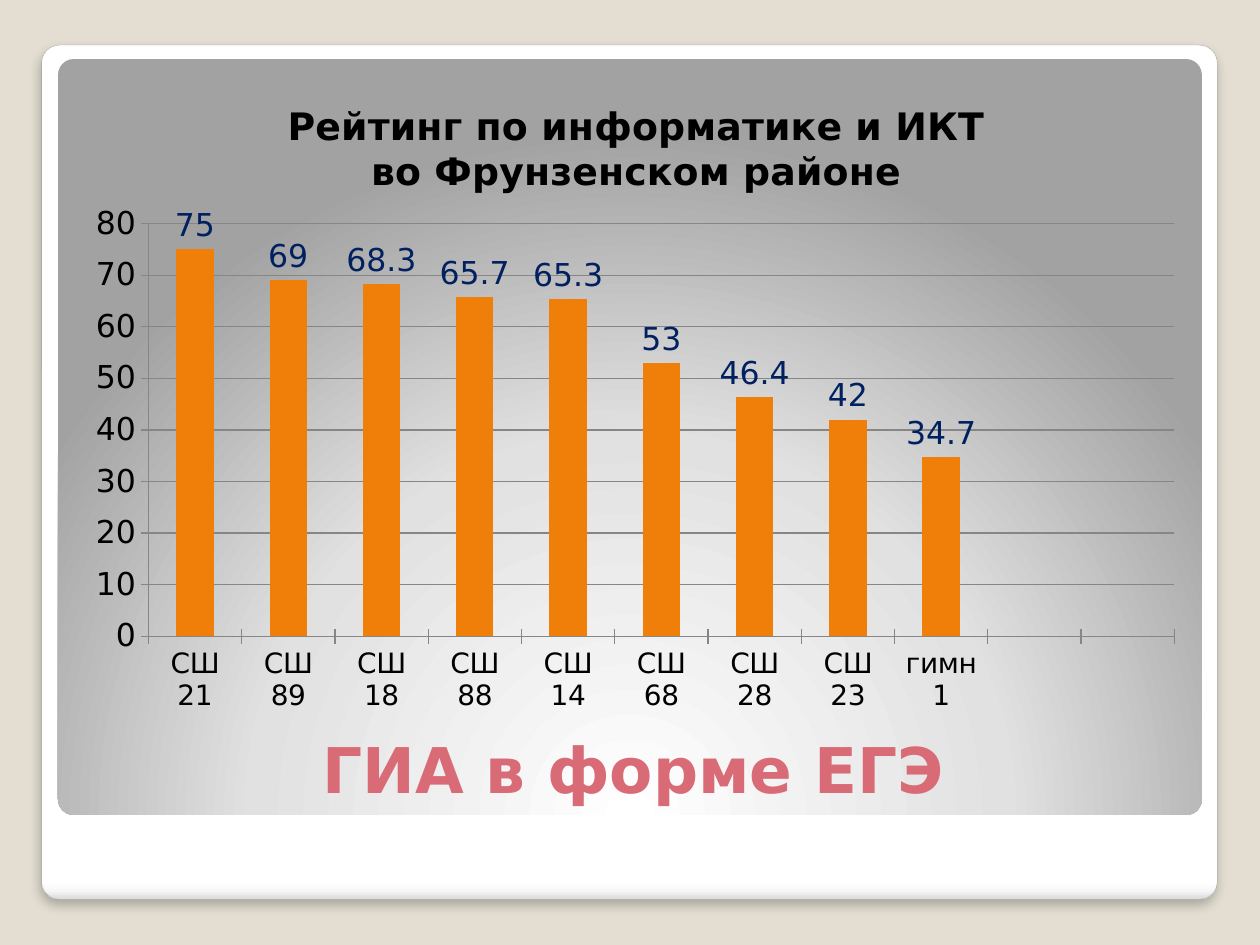
from dataclasses import dataclass
from typing import Any

from lxml.etree import SubElement
from pptx import Presentation
from pptx.chart.data import CategoryChartData
from pptx.dml.color import RGBColor
from pptx.enum.chart import XL_CHART_TYPE, XL_LABEL_POSITION, XL_TICK_MARK
from pptx.enum.shapes import MSO_SHAPE
from pptx.enum.text import MSO_ANCHOR, PP_ALIGN
from pptx.oxml import parse_xml
from pptx.oxml.ns import qn
from pptx.util import Cm, Pt

SAND = RGBColor(0xE3, 0xDE, 0xD1)
ROSE = RGBColor(0xD9, 0x6B, 0x77)
BLACK = RGBColor(0, 0, 0)
GRAY = RGBColor(0x86, 0x86, 0x86)
EDGE = RGBColor(0xA4, 0xA4, 0xA4)
AMBER = RGBColor(0xF0, 0x7F, 0x09)
NAVY = RGBColor(0x00, 0x20, 0x60)
FACE = "DejaVu Sans"
NS = "http://schemas.openxmlformats.org/drawingml/2006/main"
LINEAR = '<a:lin ang="5400000" scaled="0"/>'
ROUND = ('<a:path path="circle"><a:fillToRect l="50000" t="175000" '
         'r="50000" b="-75000"/></a:path>')
SCORES = {"СШ 21": 75, "СШ 89": 69, "СШ 18": 68.3, "СШ 88": 65.7, "СШ 14": 65.3,
          "СШ 68": 53, "СШ 28": 46.4, "СШ 23": 42, "гимн 1": 34.7}
SPARE = 2


@dataclass
class Panel:
    box: tuple[float, ...]
    stops: dict[int, str]
    shade: str
    edge: bool


PANELS = [
    Panel((0.84, 0.91, 23.7, 17.22),
          {0: "FFFFFF", 98: "FFFFFF", 99: "F7F7F7", 100: "DADADA"}, LINEAR, True),
    Panel((1.17, 1.19, 23.06, 15.24),
          {0: "FFFFFF", 55: "E1E1E1", 100: "A2A2A2"}, ROUND, False),
]


def style(item: Any, form: dict[str, Any]) -> None:
    for key, val in form.items():
        setattr(item, key, val)


def set_font(font: Any, size: float, color: RGBColor, bold: bool = False) -> None:
    style(font, {"size": Pt(size), "name": FACE, "bold": bold})
    font.color.rgb = color


def set_line(line: Any, color: RGBColor, width: float) -> None:
    line.color.rgb = color
    line.width = Pt(width)


def place(node: Any, marks: dict[str, Any]) -> None:
    for old in node.findall(qn("c:layout")):
        node.remove(old)
    layout = parse_xml('<c:layout xmlns:c="http://schemas.openxmlformats.org/'
                       'drawingml/2006/chart"><c:manualLayout/></c:layout>')
    for tag, val in marks.items():
        SubElement(layout[0], qn(f"c:{tag}")).set("val", str(val))
    if node.tag == qn("c:title"):
        node.find(qn("c:tx")).addnext(layout)
    else:
        node.insert(0, layout)


def add_panel(slide: Any, panel: Panel) -> None:
    shape = slide.shapes.add_shape(MSO_SHAPE.ROUNDED_RECTANGLE, *map(Cm, panel.box))
    shape.adjustments[0] = 0.021
    shape.shadow.inherit = False
    shape.fill.solid()
    props = shape._element.spPr
    stops = "".join(f'<a:gs pos="{pos * 1000}"><a:srgbClr val="{hue}"/></a:gs>'
                    for pos, hue in panel.stops.items())
    props.replace(props.find(qn("a:solidFill")), parse_xml(
        f'<a:gradFill xmlns:a="{NS}" rotWithShape="1"><a:gsLst>{stops}</a:gsLst>'
        f'{panel.shade}</a:gradFill>'))
    if panel.edge:
        set_line(shape.line, EDGE, 0.16)
        props.find(qn("a:effectLst")).append(parse_xml(
            f'<a:outerShdw xmlns:a="{NS}" blurRad="{Pt(6)}" dist="{Pt(4)}" '
            'dir="5400000" algn="t" rotWithShape="0"><a:srgbClr val="000000">'
            '<a:alpha val="25000"/></a:srgbClr></a:outerShdw>'))
    else:
        shape.line.fill.background()


def add_head(slide: Any) -> None:
    frame = slide.shapes.add_textbox(*map(Cm, (1.4, 13.28, 22.73, 2.97))).text_frame
    style(frame, {"word_wrap": True, "vertical_anchor": MSO_ANCHOR.BOTTOM,
                  "margin_bottom": 0, "text": "ГИА в форме ЕГЭ"})
    para = frame.paragraphs[0]
    para.alignment = PP_ALIGN.CENTER
    set_font(para.runs[0].font, 36, ROSE, True)


def add_graph(slide: Any) -> None:
    data = CategoryChartData()
    data.categories = [*SCORES, *[""] * SPARE]
    data.add_series("Series 1", [*SCORES.values(), *[None] * SPARE])
    box = map(Cm, (1.4, 1.47, 22.73, 13.21))
    chart = slide.shapes.add_chart(XL_CHART_TYPE.COLUMN_CLUSTERED, *box, data).chart
    chart.has_legend = False
    set_font(chart.font, 18, BLACK)

    frame = chart.chart_title.text_frame
    frame.text = "Рейтинг по информатике и ИКТ\nво Фрунзенском районе"
    for para in frame.paragraphs:
        para.alignment = PP_ALIGN.CENTER
        set_font(para.runs[0].font, 21.6, BLACK, True)
    place(chart.chart_title._element,
          {"xMode": "edge", "yMode": "edge", "x": 0.19, "y": 0.04})

    for axis, size in ((chart.category_axis, 16), (chart.value_axis, 18)):
        style(axis, {"major_tick_mark": XL_TICK_MARK.CROSS,
                     "minor_tick_mark": XL_TICK_MARK.NONE})
        set_font(axis.tick_labels.font, size, BLACK)
        set_line(axis.format.line, GRAY, 0.75)
    style(chart.value_axis, {"minimum_scale": 0, "maximum_scale": 80,
                             "major_unit": 10, "has_major_gridlines": True})
    set_line(chart.value_axis.major_gridlines.format.line, GRAY, 0.75)

    plot = chart.plots[0]
    style(plot, {"gap_width": 150, "vary_by_categories": False})
    bars = plot.series[0]
    bars.format.fill.solid()
    bars.format.fill.fore_color.rgb = AMBER
    style(bars.data_labels, {"show_value": True,
                             "position": XL_LABEL_POSITION.OUTSIDE_END})
    set_font(bars.data_labels.font, 18, NAVY)
    place(chart._chartSpace.chart.plotArea,
          {"layoutTarget": "inner", "xMode": "edge", "yMode": "edge",
           "x": 0.07, "y": 0.23, "w": 0.91, "h": 0.63})


def main() -> None:
    deck = Presentation()
    style(deck, {"slide_width": Cm(25.4), "slide_height": Cm(19.05)})
    slide = deck.slides.add_slide(deck.slide_layouts[6])
    slide.background.fill.solid()
    slide.background.fill.fore_color.rgb = SAND
    for panel in PANELS:
        add_panel(slide, panel)
    add_head(slide)
    add_graph(slide)
    deck.save("out.pptx")


if __name__ == "__main__":
    main()
